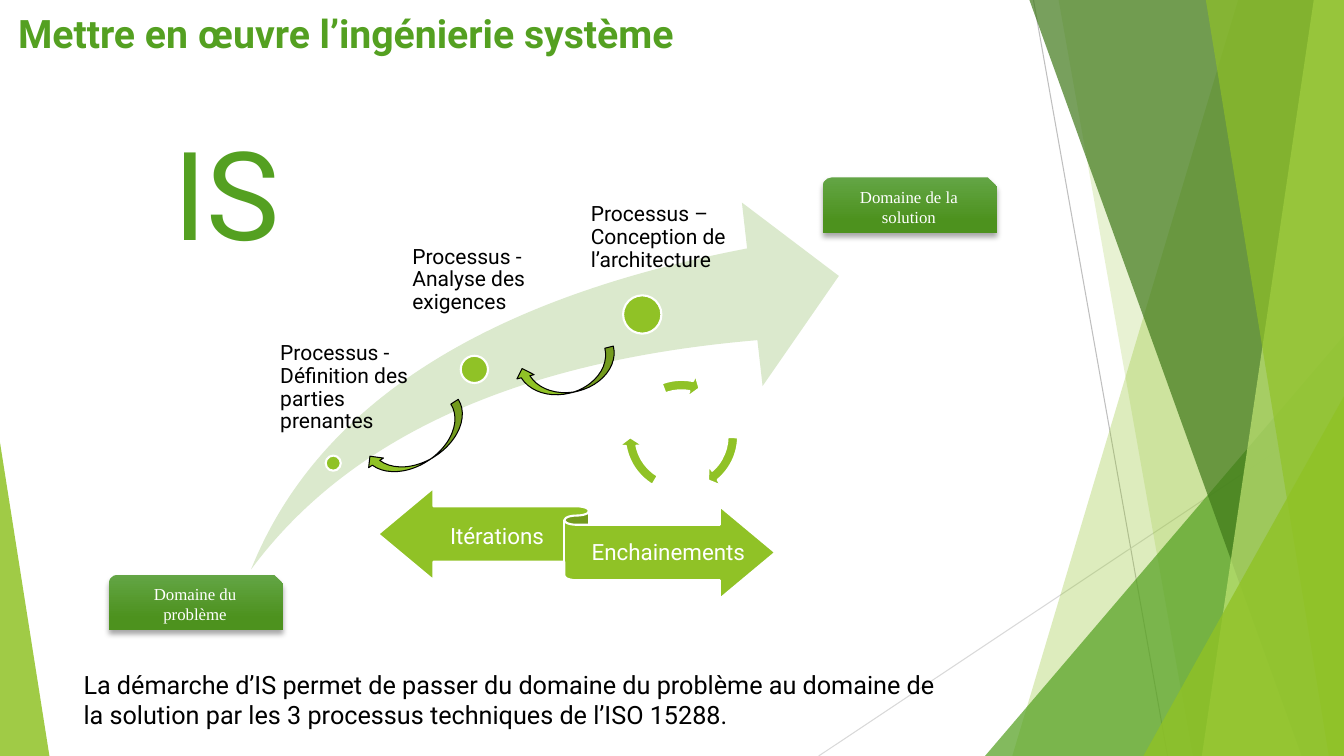
from lxml.etree import SubElement
from pptx import Presentation
from pptx.dml.color import RGBColor
from pptx.enum.shapes import MSO_CONNECTOR, MSO_SHAPE
from pptx.enum.text import MSO_ANCHOR, PP_ALIGN
from pptx.oxml.ns import qn
from pptx.util import Inches, Pt

COLORS = {
    "lime": "90C226", "green": "54A021", "forest": "3F7819", "pale lime": "C0E474",
    "swoosh": "DBE9CD", "box top": "63A545", "box bottom": "4D921E",
    "white": "FFFFFF", "black": "000000", "grey": "BFBFBF", "light grey": "D9D9D9",
}
WIDTH, HEIGHT = 13.33, 7.5


def paint(shape, fill, line=None, weight=1.5, opacity=100):
    shape.shadow.inherit = False
    shape.fill.solid()
    shape.fill.fore_color.rgb = RGBColor.from_string(COLORS[fill])
    if opacity < 100:
        color = shape._element.spPr.find(qn("a:solidFill"))[0]
        SubElement(color, qn("a:alpha")).set("val", str(opacity * 1000))
    if line:
        shape.line.color.rgb = RGBColor.from_string(COLORS[line])
        shape.line.width = Pt(weight)
    else:
        shape.line.fill.background()


def write(shape, text, size, color, font="Roboto", align=PP_ALIGN.LEFT, spacing=None,
          insets=(0.1, 0.05, 0.1, 0.05), anchor=MSO_ANCHOR.TOP, bold=False):
    frame = shape.text_frame
    frame.word_wrap = True
    frame.vertical_anchor = anchor
    frame.margin_left, frame.margin_top, frame.margin_right, frame.margin_bottom = map(Inches, insets)
    para = frame.paragraphs[0]
    para.alignment = align
    para.line_spacing = spacing
    span = para.add_run()
    span.text = text
    span.font.name = font
    span.font.size = Pt(size)
    span.font.bold = bold
    span.font.color.rgb = RGBColor.from_string(COLORS[color])


deck = Presentation()
deck.slide_width, deck.slide_height = Inches(WIDTH), Inches(HEIGHT)
page = deck.slides.add_slide(deck.slide_layouts[5])
shapes = page.shapes

# Thin lines behind the facets
for color, *ends in [("grey", 10.25, 0, 11.58, HEIGHT), ("light grey", WIDTH, 4.03, 8.12, HEIGHT)]:
    thread = shapes.add_connector(MSO_CONNECTOR.STRAIGHT, *map(Inches, ends))
    thread.line.color.rgb = RGBColor.from_string(COLORS[color])
    thread.line.width = Pt(0.75)
    SubElement(thread._element.spPr, qn("a:effectLst"))

# Facets: colour, opacity, top corner x and y, bottom corner x
facets = [
    ("lime", 30, 12.28, 0, 10.04),
    ("lime", 20, 10.5, 0, 11.83),
    ("green", 72, WIDTH, 3.33, 9.77),
    ("forest", 70, 10.21, 0, 12.91),
    ("pale lime", 70, 13.03, 0, 11.92),
    ("lime", 65, 11.96, 0, 13.18),
    ("lime", 80, WIDTH, 3.93, 11.34),
    ("lime", 85, 0, 4.39, 0.49),
]
for color, opacity, top_x, top_y, bottom_x in facets:
    if top_y:
        facet = shapes.add_shape(
            MSO_SHAPE.ISOSCELES_TRIANGLE, Inches(min(top_x, bottom_x)), Inches(top_y),
            Inches(abs(top_x - bottom_x)), Inches(HEIGHT - top_y))
        facet.adjustments[0] = 1 if top_x > bottom_x else 0
    else:
        outline = shapes.build_freeform(Inches(top_x), 0)
        corners = [(WIDTH, 0), (WIDTH, HEIGHT), (bottom_x, HEIGHT)]
        outline.add_line_segments([(Inches(x), Inches(y)) for x, y in corners])
        facet = outline.convert_to_shape()
    paint(facet, color, opacity=opacity)

# Title
title = shapes.title
title.left, title.top, title.width, title.height = map(Inches, (0.08, 0.09, 9.82, 0.48))
title.fill.solid()
title.fill.fore_color.rgb = RGBColor.from_string(COLORS["white"])
write(title, "Mettre en œuvre l’ingénierie système", 28, "green", bold=True, anchor=MSO_ANCHOR.MIDDLE)

# Rising arrow with its three processes
swoosh = shapes.add_shape(MSO_SHAPE.SWOOSH_ARROW, *map(Inches, (2.49, 2.01, 5.83, 3.64)))
swoosh.adjustments[0] = swoosh.adjustments[1] = 0.25
paint(swoosh, "swoosh")

processes = [
    ((3.23, 4.52, 0.15), (2.7, 3.4, 1.36, 0.87), 0.08, "Processus - Définition des parties prenantes"),
    ((4.57, 3.53, 0.27), (3.94, 2.44, 1.4, 0.92), 0.15, "Processus - Analyse des exigences"),
    ((6.18, 2.93, 0.38), (5.66, 2.02, 1.59, 0.87), 0.2, "Processus – Conception de l’architecture"),
]
for (left, top, size), place, inset, text in processes:
    dot = shapes.add_shape(MSO_SHAPE.OVAL, *map(Inches, (left, top, size, size)))
    paint(dot, "lime", "white")
    label = shapes.add_textbox(*map(Inches, place))
    write(label, text, 15, "black", spacing=0.9, insets=(inset, 0, 0, 0))

# Two-way ribbon
ribbon = shapes.add_shape(MSO_SHAPE.LEFT_RIGHT_RIBBON, *map(Inches, (3.75, 4.84, 3.94, 1.1)))
paint(ribbon, "lime", "white")
for text, place in [("Itérations", (3.83, 4.68, 2.2, 1.31)), ("Enchainements", (5.33, 4.84, 2.6, 1.31))]:
    label = shapes.add_textbox(*map(Inches, place))
    write(label, text, 16, "white", align=PP_ALIGN.CENTER, spacing=0.9,
          insets=(0, 0.06, 0, 0.07), anchor=MSO_ANCHOR.MIDDLE)

# Curved arrows back to the previous process
for place, angle in [((5.12, 3.55, 1.02, 0.35), 166.2), ((3.6, 4.24, 1.13, 0.35), 147.2)]:
    arrow = shapes.add_shape(MSO_SHAPE.CURVED_DOWN_ARROW, *map(Inches, place))
    arrow.rotation = angle
    paint(arrow, "lime", "black", 0.75)

# Cycle of three arcs
for head_angle, tail_angle in [(29.624, 0.527), (101.709, 72.612), (168.554, 149.682)]:
    arc = shapes.add_shape(MSO_SHAPE.CIRCULAR_ARROW, *map(Inches, (6.13, 3.7, 1.26, 1.26)))
    for index, value in enumerate((0.083, 5.764, head_angle, tail_angle, 0.096)):
        arc.adjustments[index] = value
    paint(arc, "lime", "white")

# Domain boxes
for text, left, top in [("Domaine du problème", 1.08, 5.7), ("Domaine de la solution", 8.16, 1.76)]:
    box = shapes.add_shape(MSO_SHAPE.SNIP_ROUND_RECTANGLE, *map(Inches, (left, top, 1.73, 0.55)))
    paint(box, "box top")
    box.fill.gradient()
    box.fill.gradient_angle = 270
    for stop, color, position in zip(box.fill.gradient_stops, ("box top", "box bottom"), (0, 0.78)):
        stop.color.rgb = RGBColor.from_string(COLORS[color])
        stop.position = position
    effects = box._element.spPr.find(qn("a:effectLst"))
    shadow = SubElement(effects, qn("a:outerShdw"), blurRad=str(Pt(4)), dist=str(Pt(3)),
                        dir="5400000", rotWithShape="0")
    shade = SubElement(shadow, qn("a:srgbClr"), val=COLORS["black"])
    SubElement(shade, qn("a:alpha"), val="35000")
    write(box, text, 12, "white", font="Times New Roman", align=PP_ALIGN.CENTER, anchor=MSO_ANCHOR.MIDDLE)

# Large initials and closing sentence
initials = shapes.add_textbox(*map(Inches, (1.62, 1.11, 1.42, 1.58)))
write(initials, "IS", 88, "green")
summary = shapes.add_textbox(*map(Inches, (0.73, 6.59, 8.78, 0.71)))
write(summary, "La démarche d’IS permet de passer du domaine du problème au domaine de la solution "
      "par les 3 processus techniques de l’ISO 15288.", 18, "black")

deck.save("out.pptx")
